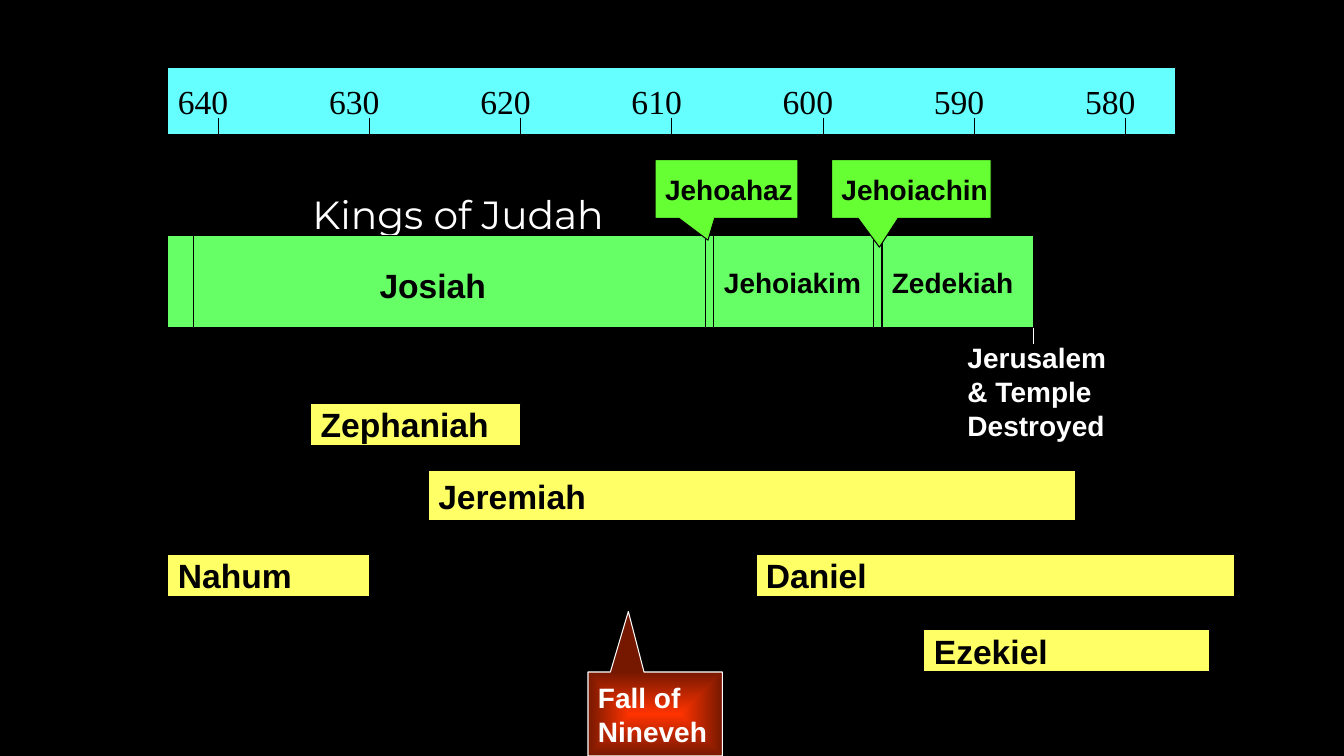
from dataclasses import dataclass

from lxml.etree import SubElement
from pptx import Presentation
from pptx.dml.color import RGBColor
from pptx.enum.shapes import MSO_CONNECTOR as Connector, MSO_SHAPE as Shape
from pptx.enum.text import MSO_ANCHOR as Anchor, PP_ALIGN as Align
from pptx.oxml.ns import qn
from pptx.util import Pt

PX = 9525  # EMU per px, 96 px to the inch


@dataclass(frozen=True)
class Theme:
    black: str = "000000"
    white: str = "FFFFFF"
    axis: str = "66FFFF"
    reign: str = "66FF66"
    short_reign: str = "66FF33"
    prophet: str = "FFFF66"
    fall_core: str = "FF3300"
    fall_edge: str = "761800"
    title_font: str = "Montserrat"
    axis_font: str = "Times New Roman"
    label_font: str = "Arial"
    title_size: int = 28
    large: int = 24
    small: int = 20
    line: float = 0.75


theme = Theme()


def write(shape, lines, size, color=theme.black, font=theme.label_font,
          bold=True, anchor=Anchor.TOP, wrap=False):
    frame = shape.text_frame
    frame.word_wrap = wrap
    frame.vertical_anchor = anchor
    for number, line in enumerate(lines):
        para = frame.add_paragraph() if number else frame.paragraphs[0]
        para.alignment = Align.LEFT
        span = para.add_run()
        span.text = line
        span.font.name = font
        span.font.size = Pt(size)
        span.font.bold = bold
        span.font.color.rgb = RGBColor.from_string(color)


def add_block(kind, box, fill, line=theme.black):
    block = page.shapes.add_shape(kind, *(n * PX for n in box))
    block.shadow.inherit = False
    block.fill.solid()
    block.fill.fore_color.rgb = RGBColor.from_string(fill)
    block.line.color.rgb = RGBColor.from_string(line)
    block.line.width = Pt(theme.line)
    return block


deck = Presentation()
deck.slide_width, deck.slide_height = 1280 * PX, 720 * PX
page = deck.slides.add_slide(deck.slide_layouts[5])
page.background.fill.solid()
page.background.fill.fore_color.rgb = RGBColor.from_string(theme.black)

# Title
title = page.shapes.title
title.left, title.top, title.width, title.height = (n * PX for n in (288, 176, 328, 55))
write(title, ["Kings of Judah"], theme.title_size, theme.white, theme.title_font, bold=False)

# Year axis, one tab stop per decade
DECADE = 144
years = range(640, 570, -10)
axis = add_block(Shape.RECTANGLE, (160, 64, 960, 64), theme.axis)
write(axis, ["\t".join(str(year) for year in years)], theme.large,
      font=theme.axis_font, bold=False, anchor=Anchor.MIDDLE, wrap=True)
tabs = SubElement(axis.text_frame.paragraphs[0]._p.get_or_add_pPr(), qn("a:tabLst"))
for step in range(1, len(years)):
    SubElement(tabs, qn("a:tab"), pos=str(step * DECADE * PX), algn="l")

# Reigns
add_block(Shape.RECTANGLE, (160, 224, 824, 88), theme.reign)

# Decade ticks, reign dividers and the mark of Jerusalem's fall
rules = [(208 + step * DECADE, 112, 128, theme.black) for step in range(len(years))]
rules += [(x, 224, 312, theme.black) for x in (184, 672, 680, 832, 840)]
rules += [(984, 312, 328, theme.white)]
for x, top, bottom, color in rules:
    rule = page.shapes.add_connector(Connector.STRAIGHT, x * PX, top * PX, x * PX, bottom * PX)
    rule.line.color.rgb = RGBColor.from_string(color)
    rule.line.width = Pt(theme.line)
    SubElement(rule._element.spPr, qn("a:effectLst"))

# Labels
labels = [
    ("Josiah", (352, 248, 121, 48), theme.large, theme.black, False),
    ("Jehoiakim", (680, 248, 150, 41), theme.small, theme.black, False),
    ("Zedekiah", (840, 248, 135, 41), theme.small, theme.black, False),
    ("Jerusalem & Temple Destroyed", (912, 320, 170, 106), theme.small, theme.white, True),
]
for text, box, size, color, wrap in labels:
    label = page.shapes.add_textbox(*(n * PX for n in box))
    write(label, [text], size, color, wrap=wrap)

# Callouts, each with its tip as a share of width and height from the centre
callouts = [
    (["Jehoahaz"], (624, 152, 136, 56), (-0.13, 0.87), theme.short_reign, theme.black),
    (["Jehoiachin"], (792, 152, 152, 56), (-0.2, 0.99), theme.short_reign, theme.black),
    (["Fall of", "Nineveh"], (560, 640, 128, 80), (-0.2, -1.22), theme.fall_core, theme.white),
]
for lines, box, tip, fill, color in callouts:
    callout = add_block(Shape.RECTANGULAR_CALLOUT, box, fill, color)
    callout.adjustments[0], callout.adjustments[1] = tip
    write(callout, lines, theme.small, color, anchor=Anchor.MIDDLE)

# Glow from the centre of the last callout, Fall of Nineveh
callout.fill.gradient()
for stop, color in zip(callout.fill.gradient_stops, (theme.fall_core, theme.fall_edge)):
    stop.color.rgb = RGBColor.from_string(color)
glow = callout._element.spPr.find(qn("a:gradFill"))
glow.remove(glow.find(qn("a:lin")))
spread = SubElement(glow, qn("a:path"), path="rect")
SubElement(spread, qn("a:fillToRect"), {side: "50000" for side in "ltrb"})

# Prophets
prophets = [
    ("Zephaniah", (296, 384, 200, 40)),
    ("Jeremiah", (408, 448, 616, 48)),
    ("Daniel", (720, 528, 456, 40)),
    ("Ezekiel", (880, 600, 272, 40)),
    ("Nahum", (160, 528, 192, 40)),
]
for name, box in prophets:
    bar = add_block(Shape.RECTANGLE, box, theme.prophet)
    write(bar, [name], theme.large, anchor=Anchor.MIDDLE)

deck.save("out.pptx")
